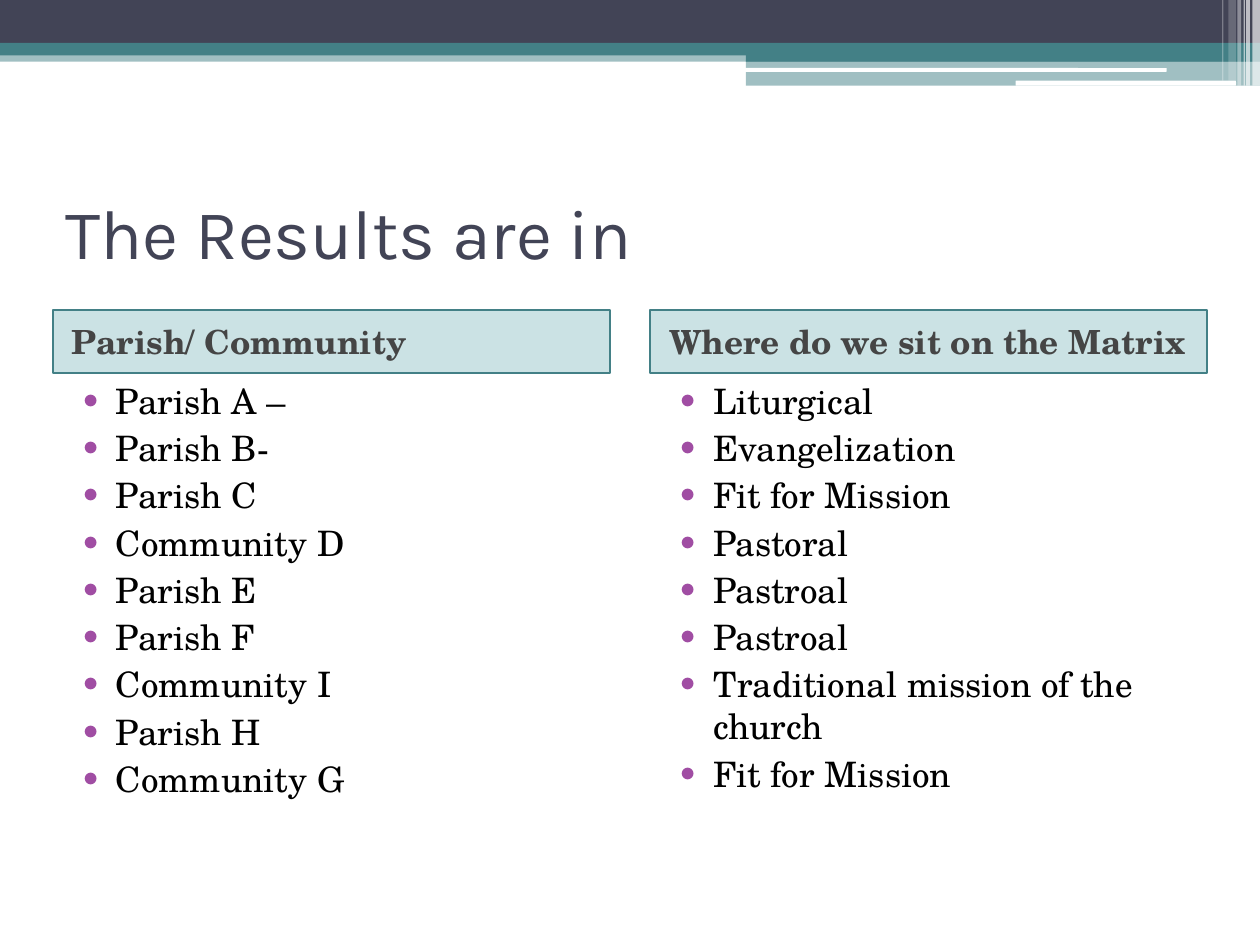
from dataclasses import dataclass

from lxml import etree
from pptx import Presentation
from pptx.dml.color import RGBColor
from pptx.enum.shapes import MSO_SHAPE as Shape
from pptx.enum.text import MSO_ANCHOR as Anchor, MSO_AUTO_SIZE as AutoSize, PP_ALIGN as Align
from pptx.oxml.ns import qn
from pptx.util import Inches, Pt


@dataclass(frozen=True)
class Theme:
    navy: str = "424456"
    teal: str = "438086"
    header_fill: str = "328E97"
    header_text: str = "454545"
    bullet: str = "A04DA3"
    white: str = "FFFFFF"
    black: str = "000000"
    title_font: str = "Karla"
    body_font: str = "TeX Gyre Schola"
    title_size: int = 40
    header_size: int = 19
    list_size: int = 20


THEME = Theme()
COLUMN_WIDTH = 4.42

# Left edge, placeholder indexes (header, list), heading, items
COLUMNS = [
    (0.42, (1, 2), "Parish/ Community",
     ["Parish A –", "Parish B-", "Parish C", "Community D", "Parish E",
      "Parish F", "Community I", "Parish H", "Community G"]),
    (5.16, (3, 4), "Where do we sit on the Matrix",
     ["Liturgical", "Evangelization", "Fit for Mission", "Pastoral", "Pastroal",
      "Pastroal", "Traditional mission of the church", "Fit for Mission"]),
]

# Left, top, width, height, colour, opacity in percent
BANDS = [
    (0, 0.4, 10, 0.09, THEME.teal, 50),
    (0, 0, 10, 0.34, THEME.navy, 100),
    (0, 0.34, 10, 0.1, THEME.teal, 100),
    (5.92, 0.39, 4.08, 0.1, THEME.teal, 100),
    (5.92, 0.48, 4.08, 0.2, THEME.teal, 50),
]
HIGHLIGHTS = [(5.91, 0.54, 3.35, 0.03), (8.06, 0.64, 1.75, 0.04)]

# Left, width, height, opacity in percent
STRIPES = [
    (9.94, 0.06, 0.68, 65),
    (9.89, 0.03, 0.68, 65),
    (9.87, 0.01, 0.68, 60),
    (9.82, 0.03, 0.68, 40),
    (9.75, 0.06, 0.64, 20),
    (9.7, 0.01, 0.64, 30),
]


def set_fill(shape, color, opacity=100):
    shape.fill.solid()
    shape.fill.fore_color.rgb = RGBColor.from_string(color)
    if opacity < 100:
        color_element = shape.fill._xPr.find(qn("a:solidFill"))[0]
        etree.SubElement(color_element, qn("a:alpha"), val=str(opacity * 1000))


def add_band(slide, left, top, width, height, color, opacity=100, kind=Shape.RECTANGLE):
    band = slide.shapes.add_shape(kind, Inches(left), Inches(top), Inches(width), Inches(height))
    band.shadow.inherit = False
    set_fill(band, color, opacity)
    band.line.fill.background()


def place(shape, left, top, width, height, anchor):
    shape.left, shape.top = Inches(left), Inches(top)
    shape.width, shape.height = Inches(width), Inches(height)
    frame = shape.text_frame
    frame.word_wrap = True
    frame.auto_size = AutoSize.NONE
    frame.vertical_anchor = anchor


def format_paragraph(paragraph, font, size, color, bold=False, before=0):
    paragraph.alignment = Align.LEFT
    paragraph.space_before = Pt(before)
    for run in paragraph.runs:
        run.font.name = font
        run.font.size = Pt(size)
        run.font.bold = bold
        run.font.color.rgb = RGBColor.from_string(color)


def set_indent(paragraph, margin, indent):
    properties = paragraph._p.get_or_add_pPr()
    properties.set("marL", str(Inches(margin)))
    properties.set("indent", str(Inches(indent)))
    return properties


def add_bullet(paragraph):
    properties = set_indent(paragraph, 0.4, -0.28)
    color = etree.SubElement(properties, qn("a:buClr"))
    etree.SubElement(color, qn("a:srgbClr"), val=THEME.bullet)
    etree.SubElement(properties, qn("a:buFont"), typeface=THEME.body_font)
    etree.SubElement(properties, qn("a:buChar"), char="•")


def fill_title(title, text):
    place(title, 0.42, 1.25, 9.17, 1.17, Anchor.MIDDLE)
    title.text_frame.text = text
    format_paragraph(title.text_frame.paragraphs[0], THEME.title_font, THEME.title_size, THEME.navy)


def fill_header(header, left, text):
    place(header, left, 2.46, COLUMN_WIDTH, 0.5, Anchor.MIDDLE)
    set_fill(header, THEME.header_fill, 25)
    header.line.color.rgb = RGBColor.from_string(THEME.teal)
    header.line.width = Pt(1)
    header.text_frame.text = text
    paragraph = header.text_frame.paragraphs[0]
    format_paragraph(paragraph, THEME.body_font, THEME.header_size, THEME.header_text, True, 3)
    set_indent(paragraph, 0.05, 0)


def fill_list(body, left, items):
    place(body, left, 2.96, COLUMN_WIDTH, 4.25, Anchor.TOP)
    body.text_frame.text = "\n".join(items)
    for paragraph in body.text_frame.paragraphs:
        format_paragraph(paragraph, THEME.body_font, THEME.list_size, THEME.black, before=3)
        add_bullet(paragraph)


def main():
    presentation = Presentation()
    presentation.slide_width, presentation.slide_height = Inches(10), Inches(7.5)
    comparison_layout = presentation.slide_layouts[4]
    slide = presentation.slides.add_slide(comparison_layout)

    # Banner across the top
    for band in BANDS:
        add_band(slide, *band)
    for highlight in HIGHLIGHTS:
        add_band(slide, *highlight, THEME.white, kind=Shape.ROUNDED_RECTANGLE)
    for left, width, height, opacity in STRIPES:
        add_band(slide, left, 0, width, height, THEME.white, opacity)

    # Title and the two columns
    fill_title(slide.shapes.title, "The Results are in")
    placeholders = {shape.placeholder_format.idx: shape for shape in slide.placeholders}
    for left, (header_index, list_index), heading, items in COLUMNS:
        fill_header(placeholders[header_index], left, heading)
        fill_list(placeholders[list_index], left, items)

    presentation.save("out.pptx")


if __name__ == "__main__":
    main()
